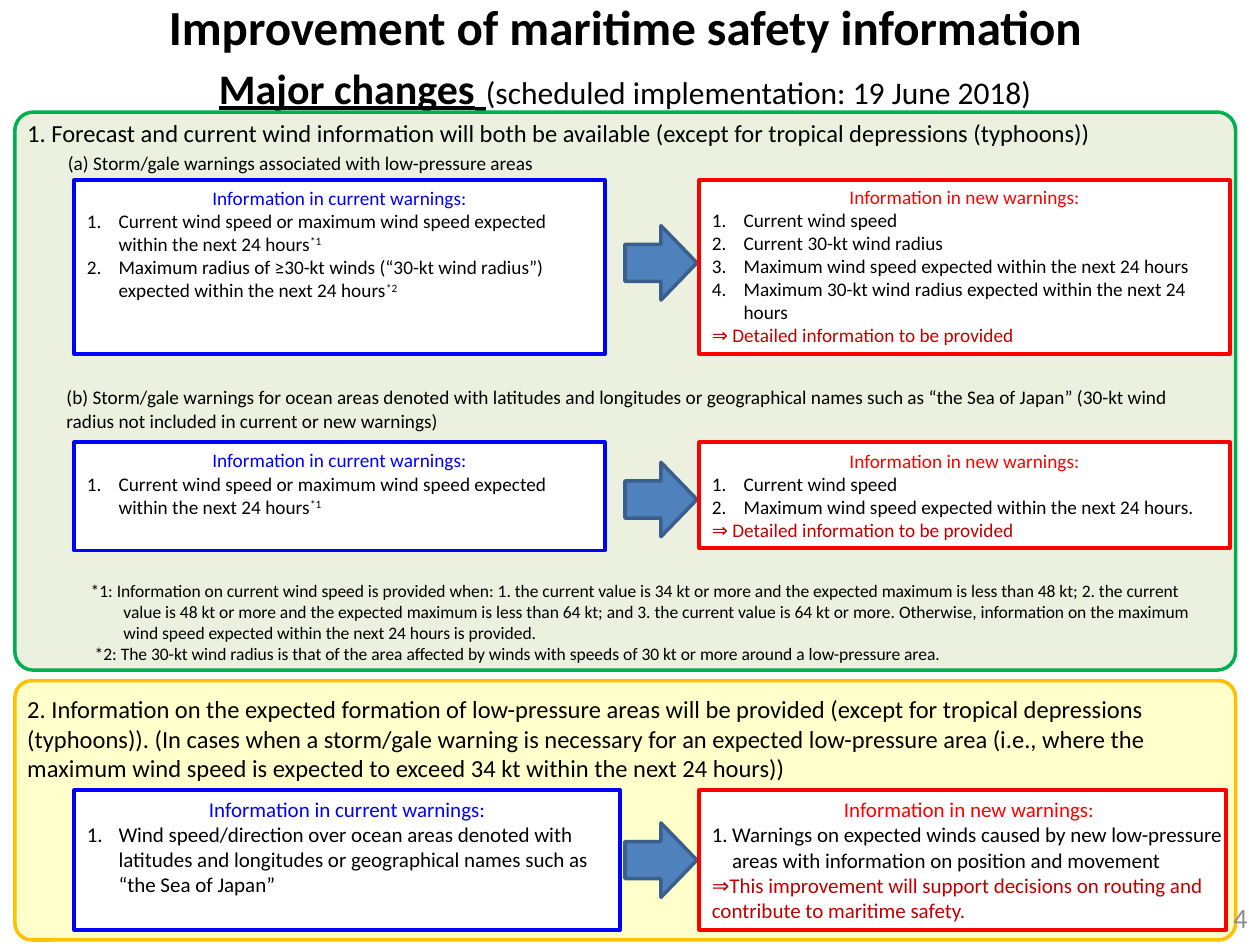
"""Build the slide on improvements to maritime safety information."""
from lxml import etree
from pptx import Presentation
from pptx import util as u
from pptx.dml.color import RGBColor
from pptx.enum import shapes, text
from pptx.oxml.ns import qn

BLACK = RGBColor(0, 0, 0)
WHITE = RGBColor(255, 255, 255)
BLUE = RGBColor(0, 0, 255)
RED = RGBColor(255, 0, 0)
DARK_RED = RGBColor(0xC0, 0, 0)
GREY = RGBColor(0x8C, 0x8C, 0x8C)
GREEN = RGBColor(0, 0xB0, 0x50)
PALE_GREEN = RGBColor(0xEB, 0xF1, 0xDE)
AMBER = RGBColor(0xFF, 0xC0, 0)
PALE_YELLOW = RGBColor(0xFF, 0xFF, 0xCC)
ARROW_FILL = RGBColor(0x4F, 0x81, 0xBD)
ARROW_LINE = RGBColor(0x3A, 0x5F, 0x8C)

Shape = shapes.MSO_SHAPE
Align = text.PP_ALIGN


def add_block(kind, box, fill, line, width):
    block = slide.shapes.add_shape(kind, *[u.Cm(length) for length in box])
    block.shadow.inherit = False
    block.fill.solid()
    block.fill.fore_color.rgb = fill
    block.line.color.rgb = line
    block.line.width = u.Pt(width)
    return block


def write(frame, content, size, color=BLACK, align=Align.LEFT, left=0, indent=0, numbered=False):
    paragraph = frame.paragraphs[0]
    if paragraph.runs:
        paragraph = frame.add_paragraph()
    paragraph.alignment = align
    properties = paragraph._p.get_or_add_pPr()
    properties.set("marL", str(u.Cm(left)))
    properties.set("indent", str(u.Cm(indent)))
    if numbered:
        etree.SubElement(properties, qn("a:buFont"), typeface="+mj-lt")
        etree.SubElement(properties, qn("a:buAutoNum"), type="arabicPeriod")
    for position, part in enumerate(content.split("^")):
        run = paragraph.add_run()
        run.text = part
        run.font.name = "Calibri"
        run.font.size = u.Pt(size)
        run.font.color.rgb = color
        if position:
            run.font._element.set("baseline", "30000")


deck = Presentation()
deck.slide_width, deck.slide_height = u.Cm(25.4), u.Cm(19.05)
slide = deck.slides.add_slide(deck.slide_layouts[5])

for top, height, corner, fill, line in [
    (13.72, 5.23, 0.066, PALE_YELLOW, AMBER),
    (2.26, 11.25, 0.033, PALE_GREEN, GREEN),
]:
    section = add_block(Shape.ROUNDED_RECTANGLE, (0.3, top, 24.61, height), fill, line, 2)
    section.adjustments[0] = corner

title = slide.shapes.title
title.left, title.top, title.width, title.height = u.Cm(0.3), u.Cm(0.03), u.Cm(24.61), u.Cm(2.16)
title.text_frame.auto_size = text.MSO_AUTO_SIZE.NONE
title.text_frame.vertical_anchor = text.MSO_ANCHOR.MIDDLE
heading = title.text_frame.paragraphs[0]
heading.alignment = Align.CENTER
for words, size, bold, underline in [
    ("Improvement of maritime safety information", 28, True, False),
    ("Major changes", 24, True, True),
    (" ", 28, True, True),
    ("(scheduled implementation: 19 June 2018)", 18, False, False),
]:
    run = heading.add_run()
    run.text = words
    run.font.name = "Calibri"
    run.font.size = u.Pt(size)
    run.font.bold = bold
    run.font.underline = underline
    run.font.color.rgb = BLACK
    if words.startswith("Improvement"):
        heading.add_line_break()
        etree.SubElement(heading._p[-1], qn("a:rPr"), sz="2800")

for box, size, words in [
    ((0.3, 2.26, 24.41, 0.86), 14,
     "1. Forecast and current wind information will both be available "
     "(except for tropical depressions (typhoons))"),
    ((1.12, 2.92, 9.98, 0.74), 11, "(a) Storm/gale warnings associated with low-pressure areas"),
    ((1.09, 7.65, 23.62, 1.19), 11,
     "(b) Storm/gale warnings for ocean areas denoted with latitudes and longitudes or geographical "
     "names such as “the Sea of Japan” (30-kt wind radius not included in current or new warnings)"),
    ((0.3, 13.87, 24.41, 2.06), 14,
     "2. Information on the expected formation of low-pressure areas will be provided (except for "
     "tropical depressions (typhoons)). (In cases when a storm/gale warning is necessary for an "
     "expected low-pressure area (i.e., where the maximum wind speed is expected to exceed 34 kt "
     "within the next 24 hours))"),
]:
    statement = slide.shapes.add_textbox(*[u.Cm(length) for length in box]).text_frame
    statement.word_wrap = True
    write(statement, words, size)

current_speed = "Current wind speed or maximum wind speed expected within the next 24 hours^*1"
detailed = "⇒ Detailed information to be provided"
comparisons = [
    (3.63, 3.51, 3.51, 4.55, 10.69, 10.69, 11, 0.64, 0.25, 0.1,
     [current_speed,
      "Maximum radius of ≥30-kt winds (“30-kt wind radius”) expected within the next 24 hours^*2"],
     ["Current wind speed", "Current 30-kt wind radius",
      "Maximum wind speed expected within the next 24 hours",
      "Maximum 30-kt wind radius expected within the next 24 hours"],
     detailed),
    (8.92, 2.18, 2.13, 9.32, 10.69, 10.69, 11, 0.64, 0.25, 0.13,
     [current_speed],
     ["Current wind speed", "Maximum wind speed expected within the next 24 hours."],
     detailed),
    (15.93, 2.82, 2.82, 16.59, 11, 10.62, 12, 0.41, 0, 0.13,
     ["Wind speed/direction over ocean areas denoted with latitudes and longitudes "
      "or geographical names such as “the Sea of Japan”"],
     ["Warnings on expected winds caused by new low-pressure areas "
      "with information on position and movement"],
     "⇒This improvement will support decisions on routing and contribute to maritime safety."),
]
for (top, current_height, new_height, arrow_top, current_width, new_width, size,
     new_indent, right_inset, top_inset, current_items, new_items, benefit) in comparisons:
    add_block(Shape.RIGHT_ARROW, (12.6, arrow_top, 1.45, 1.5), ARROW_FILL, ARROW_LINE, 2)
    for age, left, width, height, color, indent, items in [
        ("current", 1.5, current_width, current_height, BLUE, 0.64, current_items),
        ("new", 14.1, new_width, new_height, RED, new_indent, new_items),
    ]:
        warnings = add_block(Shape.RECTANGLE, (left, top, width, height), WHITE, color, 2.25).text_frame
        warnings.word_wrap = True
        warnings.vertical_anchor = text.MSO_ANCHOR.TOP
        if age == "new":
            warnings.margin_right = u.Cm(right_inset)
            warnings.margin_top = warnings.margin_bottom = u.Cm(top_inset)
        write(warnings, f"Information in {age} warnings:", size, color, Align.CENTER)
        for item in items:
            write(warnings, item, size, left=indent, indent=-indent, numbered=True)
    write(warnings, benefit, size, DARK_RED)

footnotes = slide.shapes.add_textbox(u.Cm(1.5), u.Cm(11.56), u.Cm(23.22), u.Cm(1.96)).text_frame
footnotes.word_wrap = True
write(footnotes,
      "*1: Information on current wind speed is provided when: 1. the current value is 34 kt or more "
      "and the expected maximum is less than 48 kt; 2. the current value is 48 kt or more and the "
      "expected maximum is less than 64 kt; and 3. the current value is 64 kt or more. Otherwise, "
      "information on the maximum wind speed expected within the next 24 hours is provided.",
      10, left=0.74, indent=-0.66)
write(footnotes,
      "*2: The 30-kt wind radius is that of the area affected by winds with speeds of 30 kt or more "
      "around a low-pressure area.",
      10, left=0.74, indent=-0.58)

page_number = slide.shapes.add_textbox(u.Cm(19.48), u.Cm(17.98), u.Cm(5.92), u.Cm(1.02)).text_frame
page_number.word_wrap = True
page_number.vertical_anchor = text.MSO_ANCHOR.MIDDLE
write(page_number, "4", 16, GREY, Align.RIGHT)

deck.save("out.pptx")
